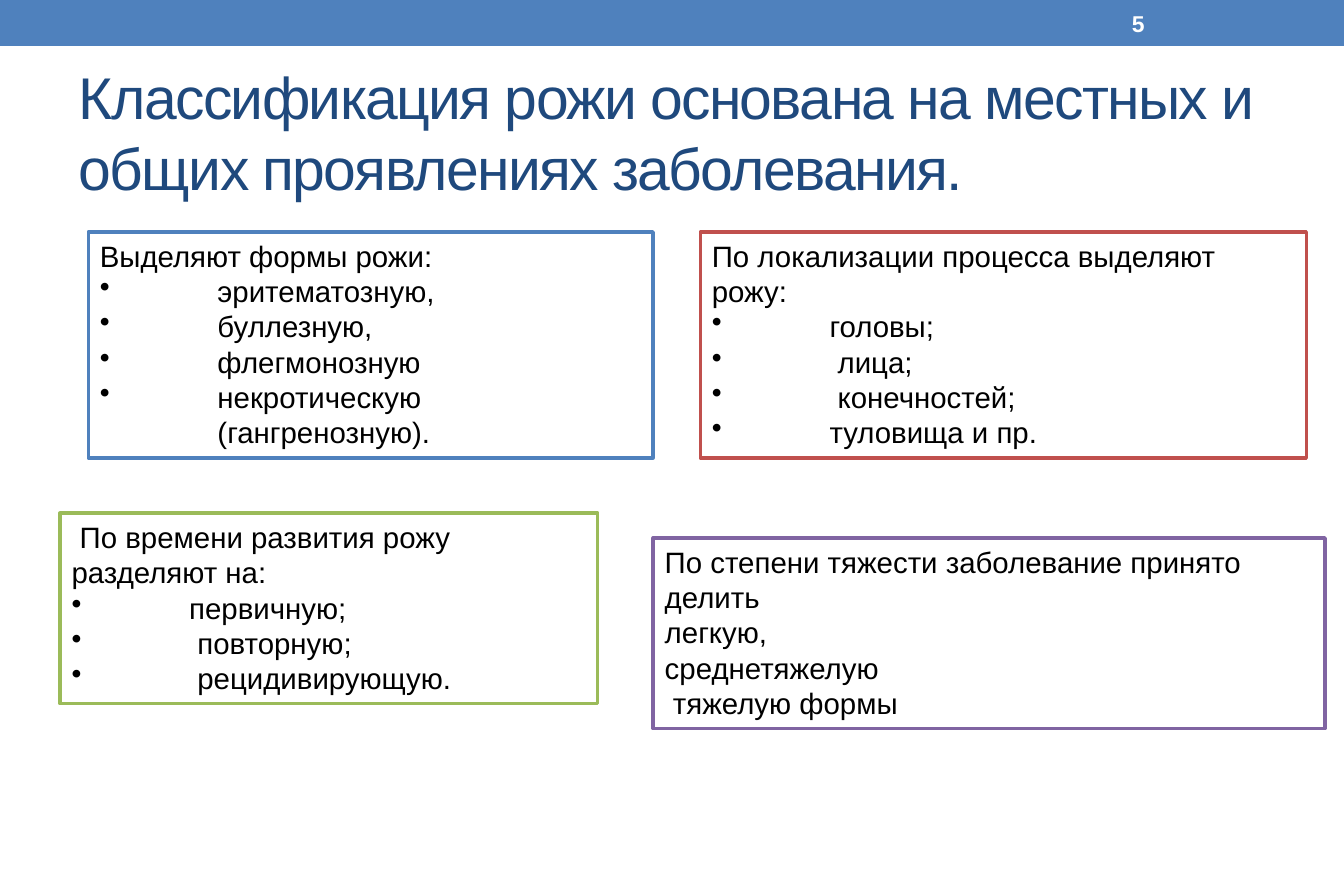
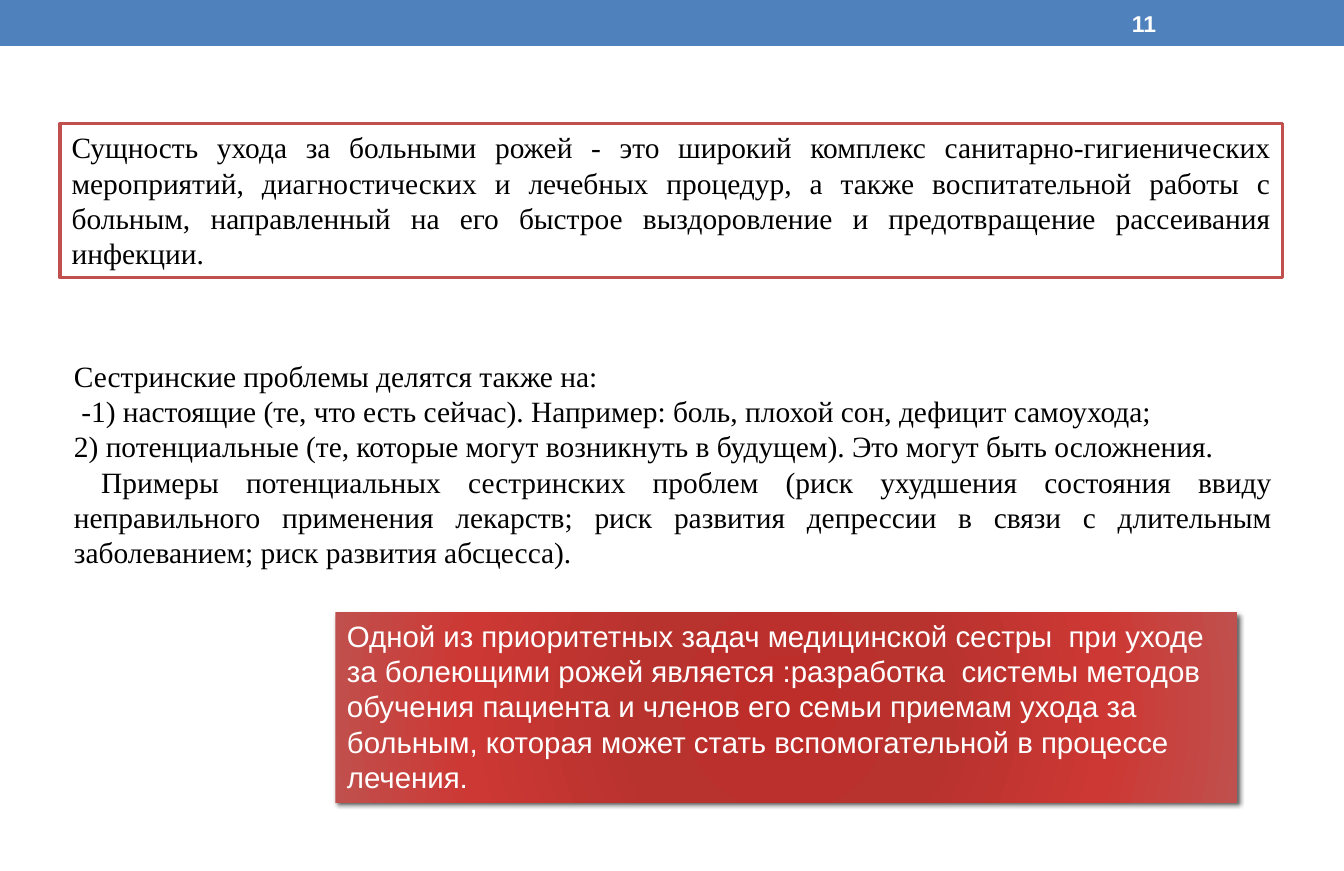
from pptx import Presentation, util as u
from pptx.dml import color
from pptx.enum import shapes, text
from pptx.oxml import parse_xml
from pptx.oxml.ns import nsdecls, qn

WIDE, HIGH = 11.42, 7.4
BLUE, NAVY, RED = "4F81BD", "1F497D", "C0504D"
GREEN, PURPLE = "9BBB59", "8064A2"
WHITE, BLACK = "FFFFFF", "000000"
SANS, SERIF = "Arial", "Times New Roman"
MIDDLE = text.MSO_ANCHOR.MIDDLE
LEFT, JUST = text.PP_ALIGN.LEFT, text.PP_ALIGN.JUSTIFY
RECT = shapes.MSO_SHAPE.RECTANGLE


def tint(code):
    return color.RGBColor.from_string(code)


def span(place):
    return [u.Inches(n) for n in place]


def bullet(para, gap=1):
    """Hang the paragraph behind a real bullet."""
    props = para._p.get_or_add_pPr()
    props.set("marL", str(u.Inches(gap)))
    props.set("indent", str(-u.Inches(gap)))
    props.append(parse_xml(f'<a:buChar {nsdecls("a")} char="•"/>'))


def write(frame, lines, size=18, font=SANS, ink=BLACK, bold=False,
          align=LEFT, anchor=text.MSO_ANCHOR.TOP, track=0):
    """Fill a frame; lines that start with • become list items."""
    frame.word_wrap = True
    frame.auto_size = text.MSO_AUTO_SIZE.NONE
    frame.vertical_anchor = anchor
    for i, line in enumerate(lines):
        para = frame.paragraphs[0] if i == 0 else frame.add_paragraph()
        para.alignment = align
        if line.startswith("•"):
            bullet(para)
        run = para.add_run()
        run.text = line.removeprefix("•")
        run.font.size, run.font.name = u.Pt(size), font
        run.font.bold = bold
        run.font.color.rgb = tint(ink)
        if track:
            run._r.get_or_add_rPr().set("spc", str(track * 100))


def rect(slide, place, fill=None, line=None):
    shape = slide.shapes.add_shape(RECT, *span(place))
    shape.shadow.inherit = False
    if fill:
        shape.fill.solid()
        shape.fill.fore_color.rgb = tint(fill)
    if line:
        shape.line.color.rgb = tint(line)
        shape.line.width = u.Pt(2.08)
    else:
        shape.line.fill.background()
    return shape


def panel(slide, place, line, lines, **form):
    """White box with a coloured outline."""
    write(rect(slide, place, WHITE, line).text_frame, lines, **form)


def label(slide, place, lines, **form):
    frame = slide.shapes.add_textbox(*span(place)).text_frame
    write(frame, lines, **form)


def callout(slide, place, lines):
    """Red box with a radial gradient and a soft shadow."""
    shape = rect(slide, place)
    stops = "".join(
        f'<a:gs pos="{pos * 1000}"><a:srgbClr val="{code}"/></a:gs>'
        for pos, code in ((0, "BD2D29"), (34, "B8322E"),
                          (70, "CD3834"), (100, RED)))
    edges = " ".join(f'{side}="100000"' for side in "ltrb")
    props = shape.element.spPr
    props.insert(2, parse_xml(
        f'<a:gradFill {nsdecls("a")} rotWithShape="1"><a:gsLst>{stops}</a:gsLst>'
        f'<a:path path="circle"><a:fillToRect {edges}/></a:path></a:gradFill>'))
    props.find(qn("a:effectLst")).append(parse_xml(
        f'<a:outerShdw {nsdecls("a")} blurRad="{u.Pt(3)}" dist="{u.Pt(2)}" '
        f'dir="{45 * 60000}" rotWithShape="0"><a:srgbClr val="{BLACK}">'
        '<a:alpha val="60000"/></a:srgbClr></a:outerShdw>'))
    write(shape.text_frame, lines, ink=WHITE)


def number(slide, value):
    label(slide, (9.52, 0.02, 1.33, 0.36), [value], size=14, ink=WHITE,
          bold=True, anchor=MIDDLE)


def band(deck, slide):
    """Put the top band on the master, behind everything."""
    bar = rect(slide, (0, 0, WIDE, 0.39), BLUE)
    deck.slide_master.shapes.element.insert(2, bar.element)


def title(slide, place, words):
    head = slide.shapes.title
    head.left, head.top, head.width, head.height = span(place)
    write(head.text_frame, [words], size=36, ink=NAVY, anchor=MIDDLE, track=-1)


def forms(deck):
    """Classification: a title and four outlined lists."""
    slide = deck.slides.add_slide(deck.slide_layouts[5])
    band(deck, slide)
    title(slide, (0.57, 0.58, 10.28, 1.07),
          "Классификация рожи основана на местных и общих проявлениях заболевания.")
    number(slide, "5")
    for place, line, lines in (
        ((0.75, 1.97, 4.8, 1.92), BLUE,
         ["Выделяют формы рожи:", "•эритематозную,", "•буллезную,",
          "•флегмонозную", "•некротическую (гангренозную)."]),
        ((0.51, 4.36, 4.57, 1.62), GREEN,
         [" По времени развития рожу разделяют на:", "•первичную;",
          "• повторную;", "• рецидивирующую."]),
        ((5.95, 1.97, 5.15, 1.92), RED,
         ["По локализации процесса выделяют рожу:", "•головы;", "• лица;",
          "• конечностей;", "•туловища и пр."]),
        ((5.55, 4.57, 5.71, 1.62), PURPLE,
         ["По степени тяжести заболевание принято делить", "легкую,",
          "среднетяжелую", " тяжелую формы"]),
    ):
        panel(slide, place, line, lines)


def care(deck):
    """Nursing care: definition, problems and main task."""
    slide = deck.slides.add_slide(deck.slide_layouts[6])
    number(slide, "11")
    prose = dict(font=SERIF, align=JUST)
    panel(slide, (0.51, 1.05, 10.39, 1.31), RED, [
        "Сущность ухода за больными рожей - это широкий комплекс "
        "санитарно-гигиенических мероприятий, диагностических и лечебных "
        "процедур, а также воспитательной работы с больным, направленный на "
        "его быстрое выздоровление и предотвращение рассеивания инфекции. "],
        **prose)
    label(slide, (0.53, 2.99, 10.38, 1.92), [
        "Сестринские проблемы делятся также на:",
        " -1) настоящие (те, что есть сейчас). Например: боль, плохой сон, "
        "дефицит самоухода; ",
        "2) потенциальные (те, которые могут возникнуть в будущем). "
        "Это могут быть осложнения.",
        " Примеры потенциальных сестринских проблем (риск ухудшения состояния "
        "ввиду неправильного применения лекарств; риск развития депрессии в "
        "связи с длительным заболеванием; риск развития абсцесса)."],
        **prose)
    callout(slide, (2.85, 5.2, 7.66, 1.62), [
        "Одной из приоритетных задач медицинской сестры  при уходе за "
        "болеющими рожей является :разработка  системы методов обучения "
        "пациента и членов его семьи приемам ухода за больным, которая может "
        "стать вспомогательной в процессе лечения."])


def main():
    deck = Presentation()
    deck.slide_width, deck.slide_height = span((WIDE, HIGH))
    forms(deck)
    care(deck)
    deck.save("out.pptx")


if __name__ == "__main__":
    main()
